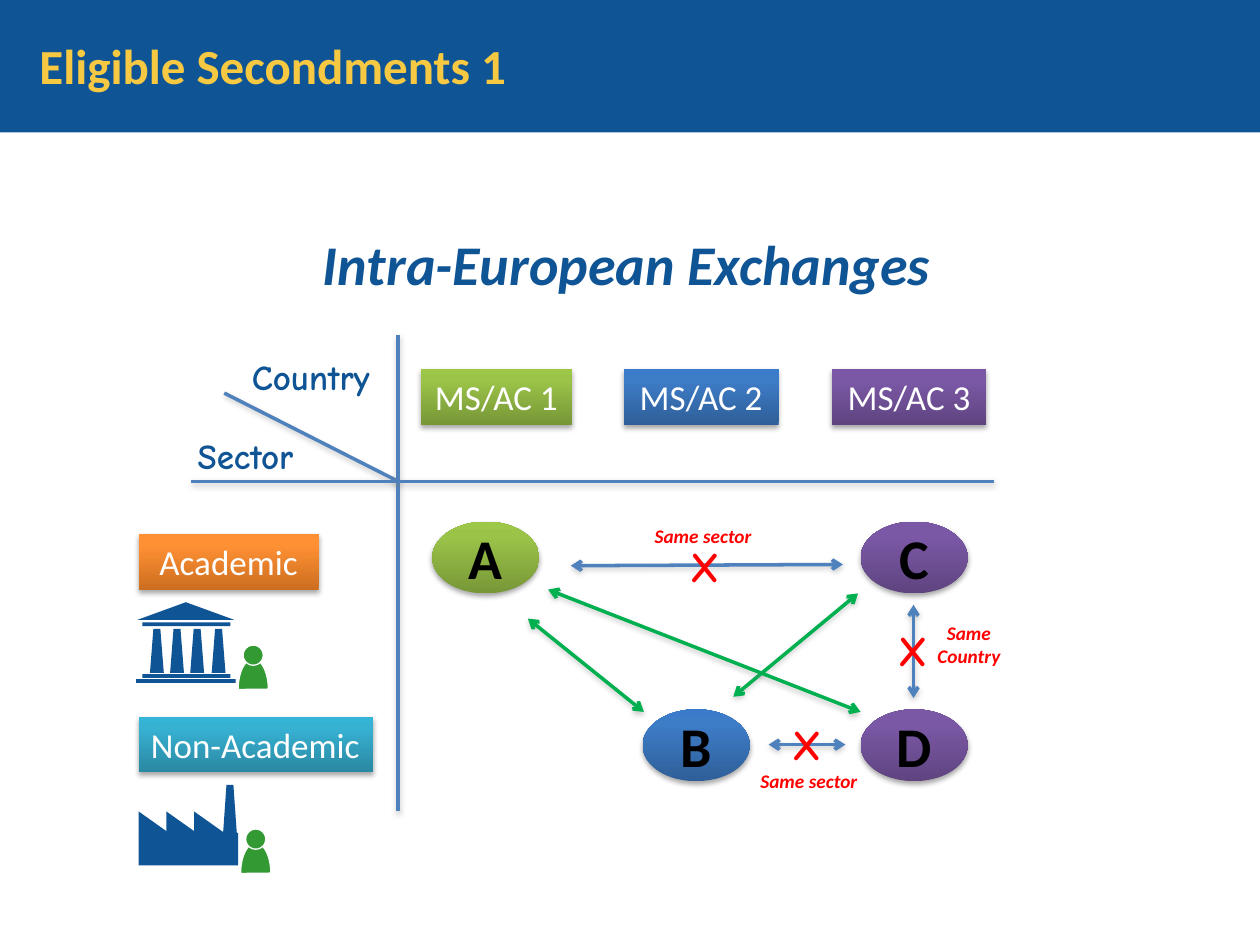
from dataclasses import dataclass

import pptx
import pptx.dml.color
import pptx.enum.shapes
import pptx.enum.text
import pptx.oxml
import pptx.oxml.ns
import pptx.util

PX = 9144  # EMU per px, 100 px to the inch
BLUE, YELLOW, WHITE, BLACK = "0F5494", "F7C943", "FFFFFF", "000000"
RED, GREEN, STEEL, PERSON = "FF0000", "00B050", "4F81BD", "339933"
# Gradient colours from bottom to top
LIME = ("779737", "9BC348", "9DC746")
AZURE = ("2F5F99", "3D7CC7", "3A7CCB")
PURPLE = ("5F4480", "7B58A6", "7C57A8")
ORANGE = ("CC6E20", "FF9034", "FF9136")
TEAL = ("2A88A2", "37B1D2", "34B4D6")

Shape = pptx.enum.shapes.MSO_SHAPE
Align = pptx.enum.text.PP_ALIGN
Anchor = pptx.enum.text.MSO_ANCHOR


@dataclass
class Box:
    left: int
    top: int
    width: int
    height: int

    def emu(self) -> list[int]:
        return [v * PX for v in (self.left, self.top, self.width, self.height)]


@dataclass
class Tile:
    text: str
    box: Box
    colors: tuple[str, str, str]
    align: Align = Align.CENTER


@dataclass
class Line:
    start: tuple[int, int]
    end: tuple[int, int]
    color: str = STEEL
    arrows: bool = False


@dataclass
class Note:
    text: str
    box: Box


def rgb(color: str) -> pptx.dml.color.RGBColor:
    return pptx.dml.color.RGBColor.from_string(color)


def add_shadow(properties, color: str, alpha: int, distance: float) -> None:
    """Put a soft shadow below the object that owns the shape properties."""
    for old in properties.findall(pptx.oxml.ns.qn("a:effectLst")):
        properties.remove(old)
    properties.append(pptx.oxml.parse_xml(
        f'<a:effectLst {pptx.oxml.ns.nsdecls("a")}>'
        f'<a:outerShdw blurRad="{pptx.util.Pt(3.1)}" dist="{pptx.util.Pt(distance)}" '
        f'dir="5400000" rotWithShape="0"><a:srgbClr val="{color}">'
        f'<a:alpha val="{alpha * 1000}"/></a:srgbClr></a:outerShdw></a:effectLst>'))


def write(shape, text: str, *, size: int, color: str, font="Calibri", bold=False,
          italic=False, align=Align.CENTER, anchor=Anchor.TOP, wrap=True) -> None:
    frame = shape.text_frame
    frame.word_wrap, frame.vertical_anchor = wrap, anchor
    for index, line in enumerate(text.split("\n")):
        para = frame.add_paragraph() if index else frame.paragraphs[0]
        para.alignment = align
        span = para.add_run()
        span.text = line
        span.font.name, span.font.size = font, pptx.util.Pt(size)
        span.font.bold, span.font.italic = bold, italic
        span.font.color.rgb = rgb(color)


def add_text(page, text: str, box: Box, **style):
    shape = page.shapes.add_textbox(*box.emu())
    write(shape, text, **style)
    return shape


def add_shape(page, kind: Shape, box: Box, color: str = BLUE, outline: str = ""):
    shape = page.shapes.add_shape(kind, *box.emu())
    shape.shadow.inherit = False
    shape.fill.solid()
    shape.fill.fore_color.rgb = rgb(color)
    if outline:
        shape.line.color.rgb = rgb(outline)
        shape.line.width = pptx.util.Pt(0.75)
    else:
        shape.line.fill.background()
    return shape


def add_tile(page, kind: Shape, tile: Tile, **style) -> None:
    shape = add_shape(page, kind, tile.box)
    shape.fill.gradient()
    shape.fill.gradient_angle = 90
    last = shape._element.spPr.findall(".//" + pptx.oxml.ns.qn("a:gs"))[-1]
    last.addnext(pptx.oxml.parse_xml(
        f'<a:gs {pptx.oxml.ns.nsdecls("a")} pos="0"><a:srgbClr val="{WHITE}"/></a:gs>'))
    for stop, color, position in zip(shape.fill.gradient_stops, tile.colors, (0, 0.8, 1)):
        stop.color.rgb, stop.position = rgb(color), position
    add_shadow(shape._element.spPr, BLACK, 35, 1.8)
    write(shape, tile.text, align=tile.align, **style)


def add_line(page, line: Line) -> None:
    ends = [v * PX for v in (*line.start, *line.end)]
    connector = page.shapes.add_connector(pptx.enum.shapes.MSO_CONNECTOR.STRAIGHT, *ends)
    connector.line.color.rgb = rgb(line.color)
    connector.line.width = pptx.util.Pt(2)
    if line.arrows:
        for tag in ("headEnd", "tailEnd"):
            connector.line._get_or_add_ln().append(pptx.oxml.parse_xml(
                f'<a:{tag} {pptx.oxml.ns.nsdecls("a")} type="arrow"/>'))
    add_shadow(connector._element.spPr, "808080", 38, 1.6)


def add_person(page, left: int, top: int) -> None:
    body = add_shape(page, Shape.CHORD, Box(left, top + 11, 24, 48), PERSON, WHITE)
    body.adjustments[0], body.adjustments[1] = 107.342, 215.817
    add_shape(page, Shape.OVAL, Box(left + 4, top, 16, 16), PERSON, WHITE)


def add_university(page) -> None:
    add_shape(page, Shape.ISOSCELES_TRIANGLE, Box(109, 478, 77, 14))
    for bar in (Box(113, 494, 70, 3), Box(113, 535, 70, 3), Box(108, 539, 79, 3)):
        add_shape(page, Shape.RECTANGLE, bar)
    for left in (119, 135, 151, 168):
        add_shape(page, Shape.TRAPEZOID, Box(left, 499, 11, 35))


def add_factory(page) -> None:
    add_shape(page, Shape.TRAPEZOID, Box(177, 623, 11, 39))
    add_shape(page, Shape.RECTANGLE, Box(110, 661, 79, 26))
    for index in range(3):
        add_shape(page, Shape.RIGHT_TRIANGLE, Box(110 + 22 * index, 644, 24, 17))


LABELS = [
    Tile("MS/AC 1", Box(334, 293, 120, 44), LIME),
    Tile("MS/AC 2", Box(495, 293, 123, 44), AZURE),
    Tile("MS/AC 3", Box(660, 293, 123, 44), PURPLE),
    Tile("Academic", Box(110, 424, 143, 44), ORANGE),
    Tile("Non-Academic", Box(110, 569, 186, 44), TEAL, Align.LEFT),
]
PARTNERS = [
    Tile("A", Box(343, 414, 85, 57), LIME),
    Tile("B", Box(510, 563, 85, 57), AZURE),
    Tile("C", Box(683, 414, 85, 57), PURPLE),
    Tile("D", Box(683, 563, 85, 57), PURPLE),
]
LINES = [
    Line((178, 312), (316, 382)),
    Line((316, 266), (316, 644)),
    Line((152, 382), (789, 382)),
    Line((419, 491), (511, 565), GREEN, True),
    Line((582, 553), (681, 471), GREEN, True),
    Line((435, 468), (683, 565), GREEN, True),
    Line((669, 448), (453, 449), arrows=True),
    Line((725, 480), (725, 554), arrows=True),
    Line((671, 591), (610, 591), arrows=True),
]
AXES = [Note("Country", Box(190, 277, 124, 44)), Note("Sector", Box(147, 340, 111, 44))]
CROSSES = [Box(535, 424, 50, 51), Box(618, 565, 45, 51), Box(703, 491, 44, 51)]
REASONS = [
    Note("Same sector", Box(509, 411, 98, 29)),
    Note("Same\nCountry", Box(724, 488, 90, 57)),
    Note("Same sector", Box(593, 606, 98, 29)),
]


def main() -> None:
    deck = pptx.Presentation()
    deck.slide_width, deck.slide_height = 1000 * PX, 750 * PX
    page = deck.slides.add_slide(deck.slide_layouts[6])

    # Header and heading
    add_shape(page, Shape.RECTANGLE, Box(0, 0, 1000, 105))
    title = add_text(page, "Eligible Secondments 1", Box(0, 0, 433, 103), size=28,
                     color=YELLOW, bold=True, anchor=Anchor.MIDDLE)
    frame = title.text_frame
    frame.margin_left = frame.margin_right = frame.margin_top = frame.margin_bottom = 0
    add_text(page, "Intra-European Exchanges", Box(218, 177, 559, 64), size=32,
             color=BLUE, bold=True, italic=True)

    # Grid of countries and sectors
    for axis in AXES:
        add_text(page, axis.text, axis.box, size=20, color=BLUE, font="Comic Neue",
                 bold=True, align=Align.LEFT, wrap=False)
    for label in LABELS:
        add_tile(page, Shape.RECTANGLE, label, size=20, color=WHITE)

    # Partners and exchanges
    for line in LINES:
        add_line(page, line)
    for partner in PARTNERS:
        add_tile(page, Shape.OVAL, partner, size=32, color=BLACK, bold=True,
                 anchor=Anchor.MIDDLE)
    for cross in CROSSES:
        add_text(page, "X", cross, size=24, color=RED, font="Comic Neue", bold=True,
                 wrap=False)
    for reason in REASONS:
        add_text(page, reason.text, reason.box, size=11, color=RED, bold=True,
                 italic=True, wrap=False)

    # Sector icons
    add_university(page)
    add_person(page, 189, 512)
    add_factory(page)
    add_person(page, 191, 658)

    deck.save("out.pptx")


if __name__ == "__main__":
    main()
